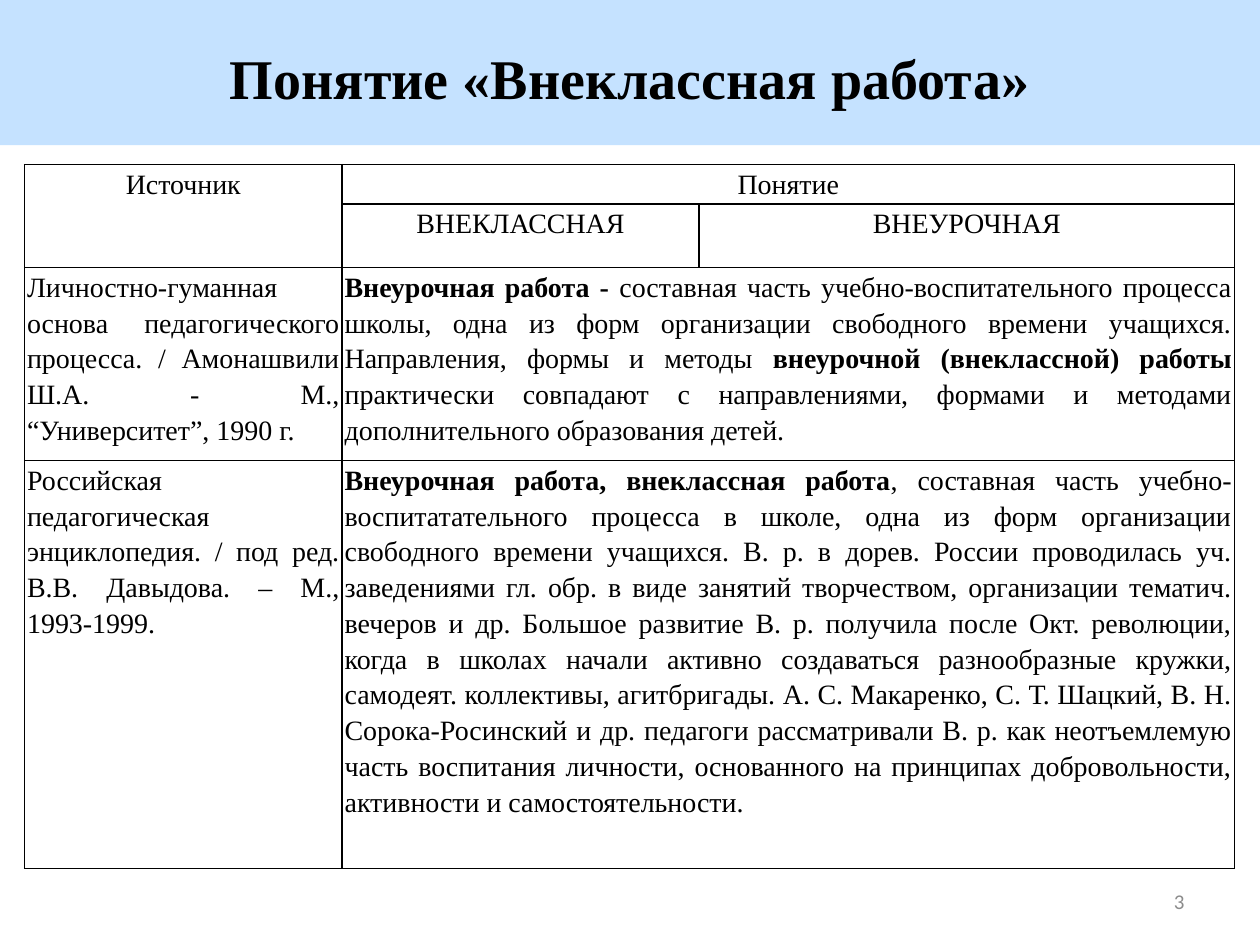
from lxml import etree
from pptx import Presentation
from pptx.dml.color import RGBColor
from pptx.enum.shapes import MSO_SHAPE
from pptx.enum.text import MSO_ANCHOR, PP_ALIGN
from pptx.oxml import parse_xml
from pptx.oxml.ns import qn
from pptx.util import Pt

RECT = MSO_SHAPE.RECTANGLE
TOP, MIDDLE = MSO_ANCHOR.TOP, MSO_ANCHOR.MIDDLE
CENTER, RIGHT, JUSTIFY = PP_ALIGN.CENTER, PP_ALIGN.RIGHT, PP_ALIGN.JUSTIFY
SERIF, SANS = "Times New Roman", "Calibri"
BLACK, GRAY, BLUE = "000000", "8C8C8C", "99CCFF"
NS = "http://schemas.openxmlformats.org/drawingml/2006/main"

HEADS = [
    (0, 0, "Источник"),
    (0, 1, "Понятие"),
    (1, 1, "ВНЕКЛАССНАЯ"),
    (1, 2, "ВНЕУРОЧНАЯ"),
]
SOURCES = [
    (
        "Личностно-гуманная основа педагогического процесса. / "
        "Амонашвили Ш.А. - М., “Университет”, 1990 г.",
        [
            ("Внеурочная работа - ", True),
            ("составная часть учебно-воспитательного процесса школы, одна из "
             "форм организации свободного времени учащихся. Направления, "
             "формы и методы", False),
            (" внеурочной (внеклассной) работы ", True),
            ("практически совпадают с направлениями, формами и методами "
             "дополнительного образования детей.", False),
        ],
    ),
    (
        "Российская педагогическая энциклопедия. / под ред. "
        "В.В. Давыдова. – М., 1993-1999.",
        [
            ("Внеурочная работа, внеклассная работа", True),
            (", составная часть учебно-воспитатательного процесса в школе, "
             "одна из форм организации свободного времени учащихся. В. р. в "
             "дорев. России проводилась уч. заведениями гл. обр. в виде "
             "занятий творчеством, организации тематич. вечеров и др. Большое "
             "развитие В. р. получила после Окт. революции, когда в школах "
             "начали активно создаваться разнообразные кружки, самодеят. "
             "коллективы, агитбригады. А. С. Макаренко, С. Т. Шацкий, В. Н. "
             "Сорока-Росинский и др. педагоги рассматривали В. р. как "
             "неотъемлемую часть воспитания личности, основанного на "
             "принципах добровольности, активности и самостоятельности.",
             False),
        ],
    ),
]


def color(code):
    return RGBColor.from_string(code)


class Deck:
    def __init__(self, slide):
        self.slide = slide
        self.shapes = slide.shapes

    def style(self, para, size, align, font=SERIF, ink=BLACK):
        para.alignment = align
        para.font.size = Pt(size)
        para.font.name = font
        para.font.color.rgb = color(ink)

    def place(self, shape, box):
        shape.left, shape.top, shape.width, shape.height = map(Pt, box)

    def band(self, box, fill, alpha):
        shape = self.shapes.add_shape(RECT, *map(Pt, box))
        shape.shadow.inherit = False
        shape.fill.solid()
        shape.fill.fore_color.rgb = color(fill)
        shape.line.fill.background()
        tone = shape.element.spPr.find(".//" + qn("a:srgbClr"))
        etree.SubElement(tone, qn("a:alpha"), val=str(alpha * 1000))
        self.shapes.element.insert(2, shape.element)

    def title(self, box, text):
        shape = self.shapes.title
        self.place(shape, box)
        frame = shape.text_frame
        frame.text = text
        frame.vertical_anchor = TOP
        para = frame.paragraphs[0]
        self.style(para, 32, CENTER)
        para.font.bold = True

    def number(self, box, text):
        frame = self.shapes.add_textbox(*map(Pt, box)).text_frame
        frame.word_wrap = True
        frame.vertical_anchor = MIDDLE
        frame.text = text
        self.style(frame.paragraphs[0], 12, RIGHT, SANS, GRAY)

    def table(self, left, top, cols, rows):
        box = map(Pt, (left, top, sum(cols), sum(rows)))
        grid = self.shapes.add_table(len(rows), len(cols), *box).table
        grid.first_row = grid.horz_banding = False
        for col, width in zip(grid.columns, cols):
            col.width = Pt(width)
        for row, height in zip(grid.rows, rows):
            row.height = Pt(height)
        for cell in grid.iter_cells():
            cell.margin_left = cell.margin_right = Pt(1.5)
            cell.margin_top = cell.margin_bottom = 0
            self.border(cell)
            cell.fill.background()
        return grid

    def border(self, cell):
        props = cell._tc.get_or_add_tcPr()
        for side in "LRTB":
            props.append(parse_xml(
                f'<a:ln{side} xmlns:a="{NS}" w="{Pt(1)}"><a:solidFill>'
                f'<a:srgbClr val="{BLACK}"/></a:solidFill></a:ln{side}>'
            ))

    def cell(self, cell, runs, align):
        para = cell.text_frame.paragraphs[0]
        self.style(para, 16, align)
        para.line_spacing = 1.15
        for text, bold in runs:
            run = para.add_run()
            run.text = text
            run.font.bold = bold


def main():
    show = Presentation()
    show.slide_width, show.slide_height = Pt(720), Pt(540)
    deck = Deck(show.slides.add_slide(show.slide_layouts[5]))
    deck.band((0, 0, 720, 83), BLUE, 56)
    deck.title((0, 21, 720, 46), "Понятие «Внеклассная работа»")
    deck.number((516, 500.5, 168, 29), "3")

    grid = deck.table(14, 94, (181.5, 204, 306), (22.5, 36.5, 110, 233))
    grid.cell(0, 0).merge(grid.cell(1, 0))
    for row in (0, 2, 3):
        grid.cell(row, 1).merge(grid.cell(row, 2))
    for row, col, text in HEADS:
        deck.cell(grid.cell(row, col), [(text, False)], CENTER)
    for row, (source, runs) in enumerate(SOURCES, 2):
        deck.cell(grid.cell(row, 0), [(source, False)], JUSTIFY)
        deck.cell(grid.cell(row, 1), runs, JUSTIFY)
    show.save("out.pptx")


if __name__ == "__main__":
    main()
